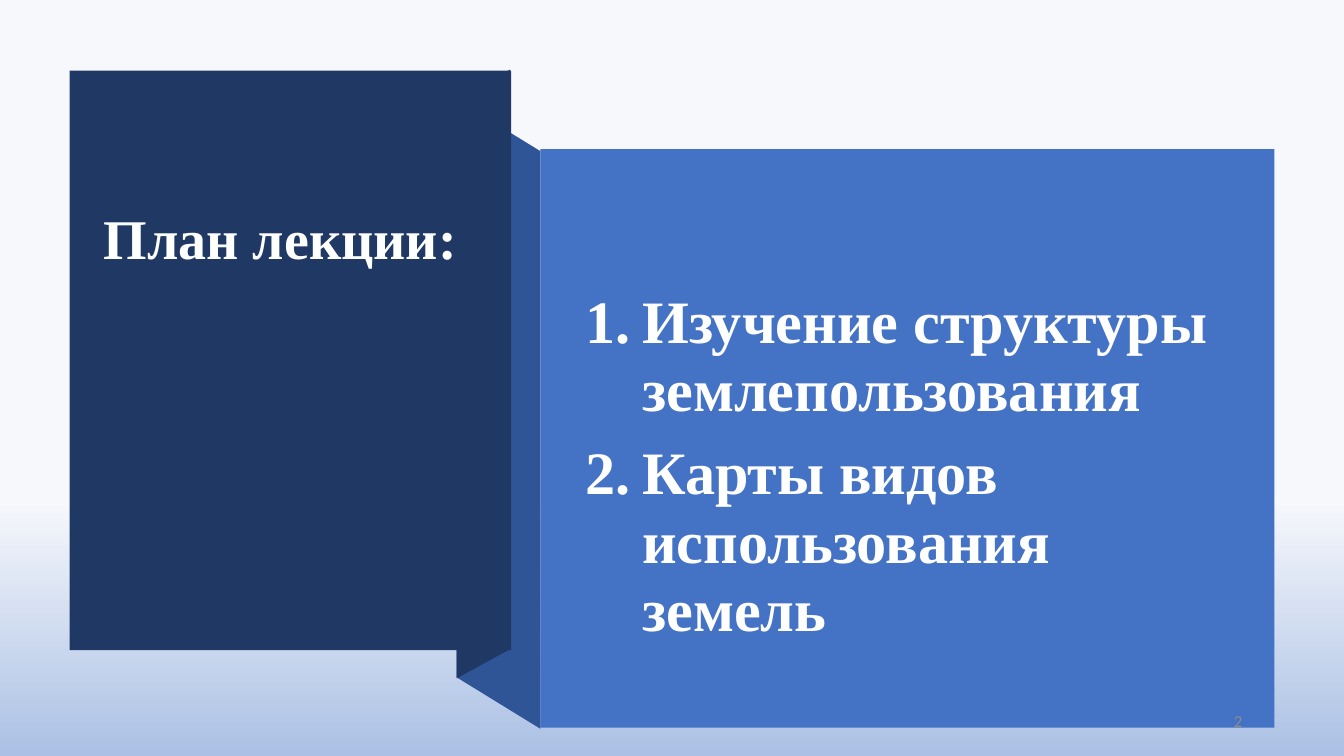
from lxml import etree
from pptx import Presentation
from pptx.dml.color import RGBColor
from pptx.enum.shapes import MSO_SHAPE
from pptx.enum.text import MSO_ANCHOR, MSO_AUTO_SIZE, PP_ALIGN
from pptx.oxml.ns import qn
from pptx.util import Inches, Pt

NAVY = RGBColor(0x20, 0x38, 0x64)
FOLD_BLUE = RGBColor(0x2F, 0x55, 0x97)
PANEL_BLUE = RGBColor(0x44, 0x72, 0xC4)
WHITE = RGBColor(0xFF, 0xFF, 0xFF)
TITLE_WHITE = RGBColor(0xFE, 0xFF, 0xFF)
NUMBER_GRAY = RGBColor(0x8C, 0x8C, 0x8C)
SKY_TOP = RGBColor(0xF6, 0xF8, 0xFC)
SKY_BOTTOM = RGBColor(0xAB, 0xC0, 0xE4)

TOPICS = ["Изучение структуры землепользования",
          "Карты видов использования земель"]


def set_attributes(target, values):
    for name, value in values.items():
        setattr(target, name, value)


def place(shape, box):
    names = ("left", "top", "width", "height")
    set_attributes(shape, dict(zip(names, map(Inches, box))))


def style_font(font, name, size, color, bold=False):
    set_attributes(font, {"name": name, "size": Pt(size), "bold": bold})
    font.color.rgb = color


def paint(shape, color):
    shape.shadow.inherit = False
    shape.fill.solid()
    shape.fill.fore_color.rgb = color
    shape.line.fill.background()


def add_background(slide):
    fill = slide.background.fill
    fill.gradient()
    fill.gradient_angle = 270
    for stop, position, color in zip(fill.gradient_stops, (0.66, 1),
                                     (SKY_TOP, SKY_BOTTOM)):
        stop.position = position
        stop.color.rgb = color


def add_fold(slide, box, left_drop, right_drop, color):
    """Slanted band: each side edge is shorter than the box by its drop."""
    left, top, width, height = box
    right, bottom = left + width, top + height
    corners = [(left, top + left_drop), (right, top + right_drop),
               (right, bottom - left_drop), (left, bottom - right_drop)]
    points = [(Inches(x), Inches(y)) for x, y in corners]
    outline = slide.shapes.build_freeform(*points[0])
    outline.add_line_segments(points[1:], close=True)
    paint(outline.convert_to_shape(), color)


def add_panel(slide, box, color):
    panel = slide.shapes.add_shape(MSO_SHAPE.RECTANGLE, *map(Inches, box))
    paint(panel, color)


def add_title_panel(slide, box):
    left, top, width, height = box
    add_panel(slide, box, NAVY)
    title = slide.shapes.title
    place(title, (left + 0.24, top + 1.27, 4.29, 0.77))
    frame = title.text_frame
    frame.text = "План лекции:"
    set_attributes(frame, {"word_wrap": True, "auto_size": MSO_AUTO_SIZE.NONE,
                           "vertical_anchor": MSO_ANCHOR.BOTTOM})
    line = frame.paragraphs[0]
    line.alignment = PP_ALIGN.LEFT
    style_font(line.runs[0].font, "Times New Roman", 40, TITLE_WHITE, True)


def number_paragraph(paragraph, indent):
    properties = paragraph._p.get_or_add_pPr()
    properties.set("marL", str(indent))
    properties.set("indent", str(-indent))
    etree.SubElement(properties, qn("a:buFont"), typeface="+mj-lt")
    etree.SubElement(properties, qn("a:buAutoNum"), type="arabicPeriod")


def add_topics_panel(slide, box):
    left, top, width, height = box
    add_panel(slide, box, PANEL_BLUE)
    topics = slide.placeholders[1]
    place(topics, (left + 0.35, top, 6.51, height - 1))
    frame = topics.text_frame
    frame.text = "\n".join(TOPICS)
    set_attributes(frame, {"word_wrap": True, "auto_size": MSO_AUTO_SIZE.NONE,
                           "vertical_anchor": MSO_ANCHOR.TOP,
                           "margin_top": Inches(1.38)})
    for topic in frame.paragraphs:
        set_attributes(topic, {"line_spacing": 0.95, "space_before": Pt(0),
                               "space_after": Pt(10),
                               "alignment": PP_ALIGN.LEFT})
        number_paragraph(topic, Inches(0.56))
        style_font(topic.runs[0].font, "Times New Roman", 43, WHITE, True)


def add_page_number(slide, box):
    frame = slide.shapes.add_textbox(*map(Inches, box)).text_frame
    frame.text = "2"
    set_attributes(frame, {"word_wrap": True,
                           "vertical_anchor": MSO_ANCHOR.MIDDLE})
    number = frame.paragraphs[0]
    number.alignment = PP_ALIGN.RIGHT
    style_font(number.runs[0].font, "Calibri", 12, NUMBER_GRAY)


def move_text_to_front(slide):
    """Put the title and list placeholders above the panels."""
    for placeholder in list(slide.placeholders):
        slide.shapes._spTree.append(placeholder._element)


def build_plan_slide(presentation):
    slide = presentation.slides.add_slide(presentation.slide_layouts[1])
    add_background(slide)
    # Folded ribbon joining the two panels
    add_fold(slide, (4.53, 0.99, 0.83, 6.24), 0, 0.51, FOLD_BLUE)
    add_fold(slide, (4.53, 0.69, 0.53, 6.04), 0.29, 0, NAVY)
    # Panels with their text
    add_title_panel(slide, (0.69, 0.7, 4.38, 5.75))
    add_topics_panel(slide, (5.36, 1.48, 7.28, 5.74))
    move_text_to_front(slide)
    add_page_number(slide, (9.42, 6.95, 3, 0.4))


def main():
    presentation = Presentation()
    presentation.slide_width = Inches(13.33)
    presentation.slide_height = Inches(7.5)
    build_plan_slide(presentation)
    presentation.save("out.pptx")


if __name__ == "__main__":
    main()
